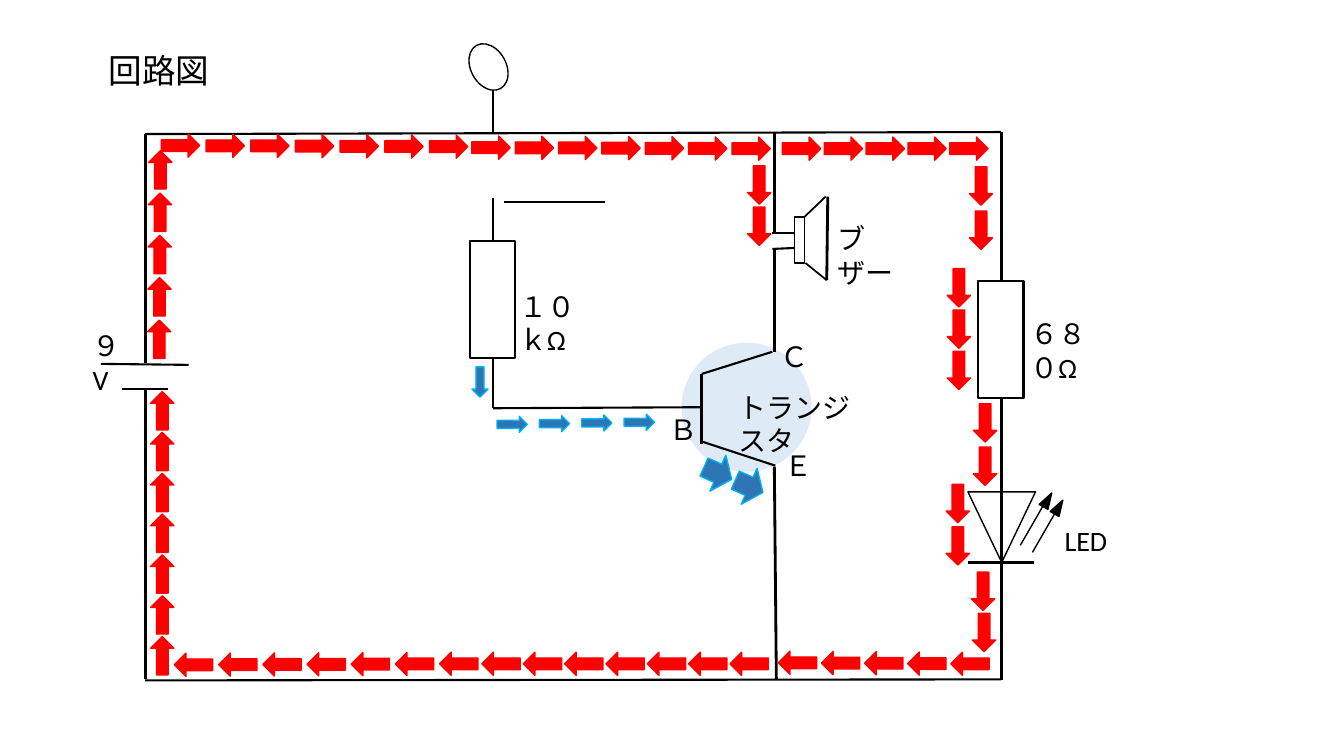
from dataclasses import dataclass
from pptx import Presentation
from pptx.dml.color import RGBColor
from pptx.enum.shapes import MSO_CONNECTOR as Link, MSO_SHAPE as Form
from pptx.enum.text import MSO_AUTO_SIZE as Fit
from pptx.oxml.ns import qn
from pptx.util import Inches, Pt
from lxml.etree import SubElement


@dataclass(frozen=True)
class Theme:
    ink: str = "000000"
    paper: str = "FFFFFF"
    red: str = "FF0000"
    blue: str = "2E75B6"
    sky: str = "00B0F0"
    pale: str = "DEEBF7"
    font: str = "Calibri"
    title: int = 24
    label: int = 20


theme = Theme()
deck = Presentation()
deck.slide_width, deck.slide_height = Inches(13.33), Inches(7.5)
slide = deck.slides.add_slide(deck.slide_layouts[6])
shapes = slide.shapes


def paint(shape, fill, line, width=1, angle=0):
    """Set fill, outline (None means none) and rotation of a shape."""
    shape.shadow.inherit = False
    shape.rotation = angle
    if fill:
        shape.fill.solid()
        shape.fill.fore_color.rgb = RGBColor.from_string(fill)
    else:
        shape.fill.background()
    if line:
        shape.line.color.rgb = RGBColor.from_string(line)
        shape.line.width = Pt(width)
    else:
        shape.line.fill.background()


def add(form, box, fill, line, width=1, angle=0):
    shape = shapes.add_shape(form, *map(Inches, box))
    paint(shape, fill, line, width, angle)
    return shape


# Transistor body, buzzer, resistors, touch pad
add(Form.OVAL, (6.76, 3.4, 1.29, 1.28), theme.pale, None)
add(Form.RECTANGLE, (7.88, 2.15, 0.1, 0.46), theme.paper, theme.ink, 1.25)

wires = [  # x1, y1, x2, y2, points
    (1.44, 1.33, 9.93, 1.31, 1.5),  # outer loop
    (1.44, 6.75, 9.93, 6.74, 1.5),
    (1.44, 1.33, 1.44, 3.6, 2),
    (1.44, 3.86, 1.44, 6.74, 2),
    (9.93, 1.31, 9.93, 2.79, 2),
    (9.93, 3.95, 9.93, 6.75, 2),
    (1, 3.61, 1.87, 3.62, 1.5),  # battery
    (1.21, 3.86, 1.67, 3.86, 1.5),
    (7.68, 1.31, 7.68, 2.31, 2),  # buzzer branch
    (7.68, 2.47, 7.68, 3.49, 2),
    (7.66, 2.31, 7.88, 2.31, 1.5),
    (7.66, 2.47, 7.88, 2.46, 1.5),
    (8.19, 1.95, 7.98, 2.15, 1.25),
    (8.2, 2.78, 7.99, 2.61, 1.25),
    (8.21, 1.95, 8.2, 2.78, 2),
    (6.96, 3.71, 6.96, 4.4, 2),  # transistor
    (7.66, 3.49, 6.96, 3.71, 1.5),
    (7.69, 4.62, 6.96, 4.38, 1.5),
    (7.68, 4.63, 7.7, 6.74, 2),
    (4.89, 4.05, 6.96, 4.04, 1.5),  # base branch
    (4.89, 1.96, 4.89, 2.39, 2),
    (4.89, 3.55, 4.89, 4.05, 2),
    (4.89, 0.87, 4.89, 1.31, 2),
    (9.6, 5.58, 10.26, 5.58, 1.5),  # LED
    (10.35, 5.01, 10.12, 5.41, 1),
    (10.47, 5.08, 10.24, 5.48, 1),
]
for *ends, width in wires:
    wire = shapes.add_connector(Link.STRAIGHT, *map(Inches, ends))
    wire.line.color.rgb = RGBColor.from_string(theme.ink)
    wire.line.width = Pt(width)
    SubElement(wire._element.spPr, qn("a:effectLst"))

for left, top in ((9.7, 2.79), (4.66, 2.39)):
    add(Form.RECTANGLE, (left, top, 0.45, 1.16), theme.paper, theme.ink, 1.75)
add(Form.OVAL, (4.67, 0.42, 0.35, 0.49), theme.paper, theme.ink, angle=331)
add(Form.ISOSCELES_TRIANGLE, (9.6, 4.88, 0.67, 0.7), None, theme.ink, angle=180)
for left, top in ((10.34, 4.88), (10.45, 4.95)):
    tip = add(Form.ISOSCELES_TRIANGLE, (left, top, 0.1, 0.16),
              theme.ink, theme.ink, angle=29.9)
    tip.adjustments[0] = 0.52

# Current flow: each run is evenly spaced from its first arrow to its last
main = (0.38, 0.23, theme.red, theme.red)
base = (0.3, 0.16, theme.blue, theme.sky)
emit = (0.3, 0.39, theme.blue, theme.sky)
runs = [  # kind, angle, count, first left and top, last left and top
    (main, 270, 5, 1.39, 3.25, 1.4, 1.57),
    (main, 0, 7, 1.6, 1.33, 4.26, 1.34),
    (main, 0, 7, 4.68, 1.35, 7.26, 1.36),
    (main, 0, 5, 7.76, 1.36, 9.42, 1.36),
    (main, 90, 2, 9.54, 1.73, 9.54, 2.17),
    (main, 90, 3, 9.32, 2.74, 9.32, 3.56),
    (main, 90, 2, 9.58, 4.08, 9.58, 4.51),
    (main, 90, 2, 9.31, 4.88, 9.31, 5.3),
    (main, 90, 2, 9.56, 5.75, 9.57, 6.16),
    (main, 180, 5, 9.43, 6.47, 7.72, 6.46),
    (main, 180, 7, 7.24, 6.47, 4.78, 6.47),
    (main, 180, 7, 4.36, 6.47, 1.73, 6.48),
    (main, 270, 7, 1.42, 6.39, 1.42, 3.96),
    (main, 90, 2, 7.34, 1.72, 7.34, 2.13),
    (base, 90, 1, 4.61, 3.71, 4.61, 3.71),
    (base, 0, 4, 4.93, 4.13, 6.19, 4.11),
    (emit, 23.9, 2, 6.97, 4.5, 7.28, 4.63),
]
for (wide, high, fill, line), angle, count, x1, y1, x2, y2 in runs:
    for step in range(count):
        part = step / max(count - 1, 1)
        spot = (x1 + (x2 - x1) * part, y1 + (y2 - y1) * part)
        add(Form.RIGHT_ARROW, (*spot, wide, high), fill, line, angle=angle)

# Loose coiled lead
coil = [
    (4.88, 1.96), (4.94, 1.94), (5, 1.93), (5.06, 1.94), (5.11, 1.96),
    (5.12, 2.04), (5.13, 2.12), (5.15, 2.2), (5.18, 2.25), (5.22, 2.28),
    (5.25, 2.22), (5.25, 2.1), (5.23, 1.76), (5.23, 1.56), (5.25, 1.53),
    (5.28, 1.5), (5.31, 1.51), (5.33, 1.57), (5.33, 1.7), (5.34, 1.85),
    (5.35, 1.98), (5.36, 2.15), (5.39, 2.17), (5.42, 2.19), (5.44, 2.18),
    (5.45, 2.15), (5.45, 2.02), (5.44, 1.92), (5.44, 1.6), (5.45, 1.57),
    (5.49, 1.54), (5.5, 1.55), (5.52, 1.64), (5.54, 1.69), (5.55, 1.72),
    (5.58, 1.74), (5.64, 1.73), (5.67, 1.7),
]
pen = shapes.build_freeform(*coil[0], scale=Inches(1))
pen.add_line_segments(coil[1:], close=False)
paint(pen.convert_to_shape(), None, theme.ink, 1.5)

labels = [
    ("回路図", 0.98, 0.45, 1.21, 0.5, theme.title),
    ("９V", 0.82, 3.21, 0.55, 0.44, theme.label),
    ("１０ｋΩ", 5.05, 2.82, 0.94, 0.44, theme.label),
    ("６８０Ω", 10.12, 3.09, 0.96, 0.44, theme.label),
    ("ブザー", 8.21, 2.15, 1, 0.44, theme.label),
    ("LED", 10.46, 5.14, 0.63, 0.44, theme.label),
    ("トランジスタ", 7.23, 3.82, 1.57, 0.44, theme.label),
    ("Ｂ", 6.54, 4.04, 0.42, 0.44, theme.label),
    ("Ｃ", 7.64, 3.32, 0.41, 0.44, theme.label),
    ("Ｅ", 7.68, 4.4, 0.4, 0.44, theme.label),
]
for text, *box, size in labels:
    frame = shapes.add_textbox(*map(Inches, box)).text_frame
    frame.word_wrap = True
    frame.auto_size = Fit.SHAPE_TO_FIT_TEXT
    run = frame.paragraphs[0].add_run()
    run.text = text
    run.font.name, run.font.size = theme.font, Pt(size)
    run.font.color.rgb = RGBColor.from_string(theme.ink)

deck.save("out.pptx")
